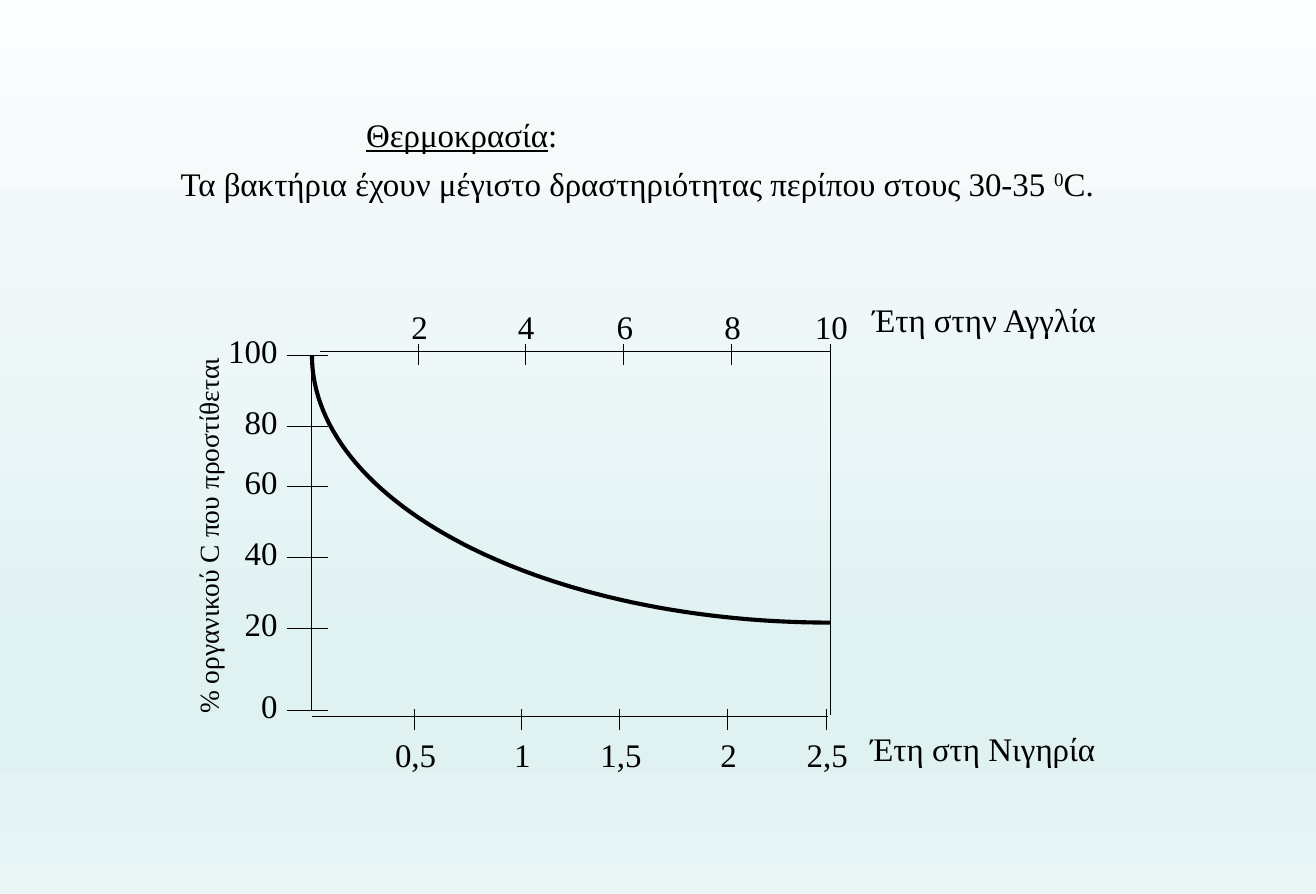
import math
from dataclasses import dataclass

from lxml import etree
from pptx import Presentation
from pptx import util as u
from pptx.dml.color import RGBColor
from pptx.enum import shapes, text
from pptx.oxml.ns import qn


@dataclass(frozen=True)
class Theme:
    font: str = "Times New Roman"
    ink: str = "000000"
    body: int = 24
    small: int = 20
    thin: float = 0.75
    thick: float = 3
    backdrop: tuple = ((0, "FCFDFE"), (74, "E0F1F2"), (83, "E0F1F2"), (100, "EBF6F7"))


THEME = Theme()
INK = RGBColor.from_string(THEME.ink)
ALIGN = text.PP_ALIGN
LABEL_H = 0.5


def paint_background(s):
    fill = s.background.fill
    fill.gradient()
    fill.gradient_angle = 270
    stops = s._element.find(".//" + qn("a:gsLst"))
    for stop in list(stops):
        stops.remove(stop)
    for pos, color in THEME.backdrop:
        stop = etree.SubElement(stops, qn("a:gs"), pos=str(pos * 1000))
        etree.SubElement(stop, qn("a:srgbClr"), val=color)


def add_text(s, x, y, w, runs, align=ALIGN.LEFT, size=THEME.body, h=LABEL_H, wrap=False):
    """Add one paragraph of runs, and return its box and the runs."""
    sp = s.shapes.add_textbox(*map(u.Inches, (x, y, w, h)))
    tf = sp.text_frame
    tf.word_wrap = wrap
    p = tf.paragraphs[0]
    p.alignment = align
    p.font.name, p.font.size = THEME.font, u.Pt(size)
    p.font.color.rgb = INK
    added = []
    for words in runs:
        r = p.add_run()
        r.text = words
        added.append(r)
    return sp, added


def add_line(s, x1, y1, x2, y2):
    line = s.shapes.add_connector(shapes.MSO_CONNECTOR.STRAIGHT,
                                  *map(u.Inches, (x1, y1, x2, y2)))
    line.line.color.rgb = INK
    line.line.width = u.Pt(THEME.thin)
    etree.SubElement(line._element.spPr, qn("a:effectLst"))


def add_heading(s, x, y, w):
    _, runs = add_text(s, x + 1.88, y, 2.16, ["Θερμοκρασία", ":"])
    runs[0].font.underline = True
    _, runs = add_text(s, x, y + LABEL_H, w, [
        "Τα βακτήρια έχουν μέγιστο δραστηριότητας περίπου στους 30-35 ", "0", "C."], wrap=True)
    runs[1].font._element.set("baseline", "30000")


def add_year_axis(s, x1, x2, y, ticks, label_top, caption, caption_top):
    """Draw a horizontal axis with ticks given as (label, x)."""
    add_line(s, x1, y, x2, y)
    for label, x in ticks:
        add_line(s, x, y - 0.07, x, y + 0.14)
        add_text(s, x - 0.39, label_top, 0.8, [label], ALIGN.CENTER)
    add_text(s, x2 + 0.33, caption_top, 2.5, [caption])


def add_carbon_axis(s, x, top, bottom, ticks, caption):
    """Draw the vertical axis with ticks given as (label, y)."""
    add_line(s, x, top, x, bottom)
    for label, y in ticks:
        add_line(s, x - 0.25, y, x + 0.16, y)
        add_text(s, x - 1.05, y - 0.3, 0.8, [label], ALIGN.RIGHT)
    w, h = 4, 0.44
    sp, _ = add_text(s, x - 1.05 - w / 2, (top + bottom - h) / 2 + 0.03, w, [caption],
                     ALIGN.CENTER, THEME.small, h)
    sp.rotation = 270


def add_decay_curve(s, x, y, w, h, steps=60):
    """Draw a quarter ellipse falling from the top left to the bottom right."""
    angles = [math.pi / 2 * i / steps for i in range(steps + 1)]
    points = [(u.Inches(x + w * (1 - math.cos(a))), u.Inches(y + h * math.sin(a)))
              for a in angles]
    builder = s.shapes.build_freeform(*points[0])
    builder.add_line_segments(points[1:], close=False)
    sp = builder.convert_to_shape()
    sp.shadow.inherit = False
    sp.fill.background()
    sp.line.color.rgb = INK
    sp.line.width = u.Pt(THEME.thick)


def add_decay_chart(s, x, y, w, h):
    right, bottom = x + w, y + h
    add_decay_curve(s, x, y, w, 2.71)
    tick_offsets = (1.08, 2.16, 3.16, 4.25, 5.25)
    england = [(label, x + dx) for label, dx in zip(("2", "4", "6", "8", "10"), tick_offsets)]
    nigeria = [(label, x + dx - 0.04)
               for label, dx in zip(("0,5", "1", "1,5", "2", "2,5"), tick_offsets)]
    add_year_axis(s, x, right - 0.02, bottom + 0.06, nigeria,
                  bottom + 0.2, "Έτη στη Νιγηρία", bottom + 0.13)
    add_year_axis(s, x + 0.08, right, y - 0.04, england,
                  y - 0.54, "Έτη στην Αγγλία", y - 0.61)
    carbon = [(label, y + dy) for label, dy in zip(
        ("100", "80", "60", "40", "20", "0"), (0, 0.72, 1.33, 2.05, 2.77, 3.6))]
    add_carbon_axis(s, x, y, bottom, carbon, "% οργανικού C που προστίθεται")
    add_line(s, right, y + 0.05, right, bottom + 0.05)


def main():
    prs = Presentation()
    prs.slide_width, prs.slide_height = u.Inches(13.33), u.Inches(9.06)
    s = prs.slides.add_slide(prs.slide_layouts[6])
    paint_background(s)
    add_heading(s, 1.73, 1.11, 9.69)
    add_decay_chart(s, 3.16, 3.6, 5.25, 3.6)
    prs.save("out.pptx")


if __name__ == "__main__":
    main()
